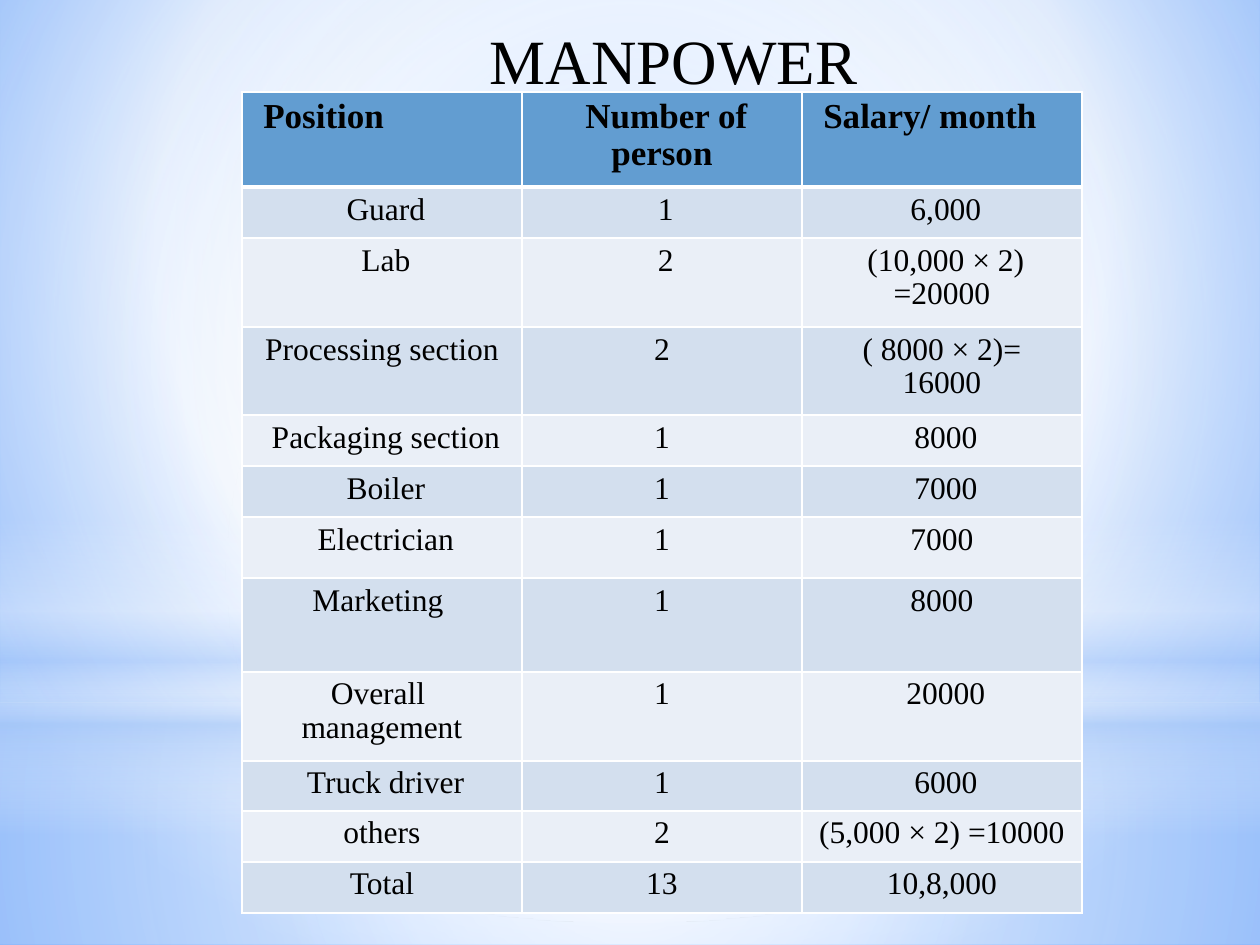
"""Build the manpower slide: a glowing blue backdrop, a title and a salary table."""
import pptx
import pptx.util
import pptx.dml.color
import pptx.enum.shapes
import pptx.enum.text
import pptx.oxml
import pptx.oxml.ns

PX = 914400 // 126
COLORS = {
    "text": "000000", "line": "FFFFFF", "header": "629DD1",
    "odd": "D3DFEE", "even": "EAEFF7",
    "white": "FFFFFF", "haze": "ACCBF9", "sky": "95C0FF", "deep": "5599FF",
}
NAMESPACE = pptx.oxml.ns.nsdecls("a")
ALIGN = pptx.enum.text.PP_ALIGN


def write_text(frame, text, size=18, bold=False, align=ALIGN.CENTER, spacing=0.96):
    for index, line in enumerate(text.split("\n")):
        para = frame.paragraphs[0] if index == 0 else frame.add_paragraph()
        para.alignment = align
        para.line_spacing = spacing
        para.space_before = para.space_after = pptx.util.Pt(0)
        span = para.add_run()
        span.text = line
        span.font.name = "Times New Roman"
        span.font.size = pptx.util.Pt(size)
        span.font.bold = bold
        span.font.color.rgb = pptx.dml.color.RGBColor.from_string(COLORS["text"])


def make_gradient(stops, focus=None):
    items = "".join(
        f'<a:gs pos="{place * 1000}"><a:srgbClr val="{COLORS[color]}">'
        f'<a:alpha val="{opacity * 1000}"/></a:srgbClr></a:gs>'
        for place, color, opacity in stops
    )
    direction = '<a:lin ang="5400000" scaled="0"/>'
    if focus:
        left, top, right, bottom = (value * 1000 for value in focus)
        direction = (f'<a:path path="circle"><a:fillToRect l="{left}" t="{top}" '
                     f'r="{right}" b="{bottom}"/></a:path>')
    return pptx.oxml.parse_xml(
        f'<a:gradFill {NAMESPACE} rotWithShape="1"><a:gsLst>{items}</a:gsLst>{direction}</a:gradFill>')


deck = pptx.Presentation()
deck.slide_width = pptx.util.Inches(10)
deck.slide_height = pptx.util.Inches(7.5)
page = deck.slides.add_slide(deck.slide_layouts[5])

page.background.fill.solid()
old_fill = page.background.fill._xPr.find(pptx.oxml.ns.qn("a:solidFill"))
old_fill.getparent().replace(old_fill, make_gradient(
    [(0, "sky", 100), (60, "white", 100), (100, "deep", 100)], (20, 10, 20, 60)))

CENTER = (50, 50, 50, 50)
RECTANGLE = pptx.enum.shapes.MSO_SHAPE.RECTANGLE
OVAL = pptx.enum.shapes.MSO_SHAPE.OVAL
panels = [
    (RECTANGLE, 703, 242, CENTER, [(0, "white", 91), (37, "white", 76), (100, "haze", 79)]),
    (RECTANGLE, 0, 703, CENTER, [(0, "white", 89), (48, "white", 62), (100, "haze", 79)]),
    (RECTANGLE, 519, 315, None, [(0, "white", 0), (29, "white", 30), (45, "haze", 40),
                                 (55, "white", 26), (65, "haze", 60), (100, "white", 0)]),
    (OVAL, 220, 703, CENTER, [(0, "white", 100), (56, "white", 0)]),
]
for kind, top, height, focus, stops in panels:
    panel = page.shapes.add_shape(kind, 0, top * PX, deck.slide_width, height * PX)
    panel.shadow.inherit = False
    panel.line.fill.background()
    geometry = panel._element.spPr.find(pptx.oxml.ns.qn("a:prstGeom"))
    geometry.addnext(make_gradient(stops, focus))

title = page.shapes.title
title.left, title.top, title.width, title.height = (value * PX for value in (474, 10, 399, 89))
title.text_frame.auto_size = pptx.enum.text.MSO_AUTO_SIZE.NONE
title.text_frame.word_wrap = False
title.text_frame.vertical_anchor = pptx.enum.text.MSO_ANCHOR.BOTTOM
title.text_frame.margin_bottom = 2 * PX
write_text(title.text_frame, "MANPOWER", size=36, spacing=1.0)
title._element.getparent().append(title._element)

rows = [
    (95, " Position", " Number of person", " Salary/ month"),
    (51, " Guard", " 1", " 6,000"),
    (89, " Lab", " 2", " (10,000 × 2) =20000"),
    (88, "Processing section", "2", "( 8000 × 2)=\n16000"),
    (51, " Packaging section", "1", " 8000"),
    (51, " Boiler", "1", " 7000"),
    (61, " Electrician", "1", "7000"),
    (94, "Marketing ", "1", "8000"),
    (89, "Overall \nmanagement", "1", " 20000"),
    (50, " Truck driver", "1", " 6000"),
    (51, "others", "2", "(5,000 × 2) =10000"),
    (51, "Total", "13", "10,8,000"),
]
table_height = sum(row[0] for row in rows)
table = page.shapes.add_table(
    len(rows), 3, 242 * PX, 92 * PX, 840 * PX, table_height * PX).table
for column in table.columns:
    column.width = 280 * PX

for row_index, (height, *texts) in enumerate(rows):
    table.rows[row_index].height = height * PX
    is_header = row_index == 0
    fill = "header" if is_header else "odd" if row_index % 2 else "even"
    for column_index, text in enumerate(texts):
        cell = table.cell(row_index, column_index)
        properties = cell._tc.get_or_add_tcPr()
        for side in "LRTB":
            is_thick = (row_index, side) in ((0, "B"), (1, "T"))
            properties.append(pptx.oxml.parse_xml(
                f'<a:ln{side} {NAMESPACE} w="{38100 if is_thick else 12700}"><a:solidFill>'
                f'<a:srgbClr val="{COLORS["line"]}"/></a:solidFill></a:ln{side}>'))
        cell.fill.solid()
        cell.fill.fore_color.rgb = pptx.dml.color.RGBColor.from_string(COLORS[fill])
        is_left = is_header and column_index != 1
        write_text(cell.text_frame, text, size=20 if is_header else 18, bold=is_header,
                   align=ALIGN.LEFT if is_left else ALIGN.CENTER)

deck.save("out.pptx")
